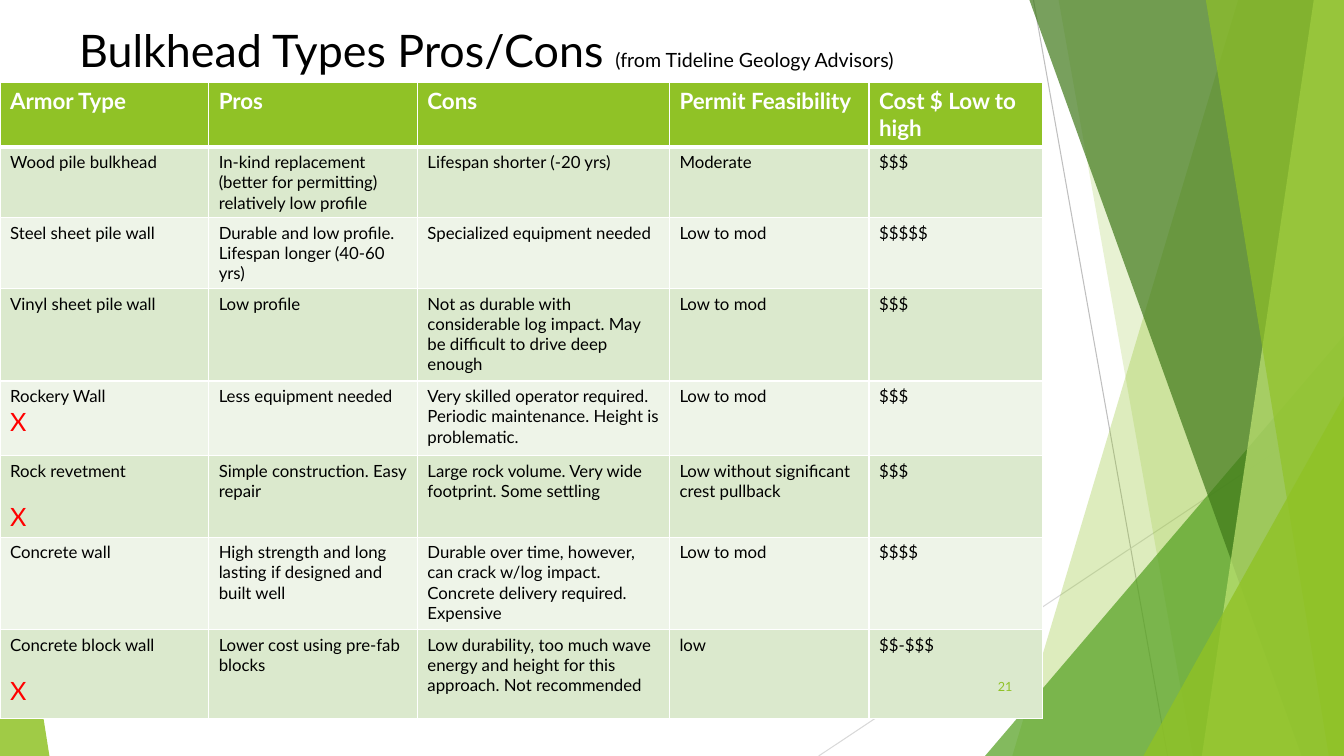
from dataclasses import dataclass

from lxml import etree
from pptx import Presentation
from pptx import util as u
from pptx.dml.color import RGBColor
from pptx.enum import shapes, text
from pptx.oxml import ns


@dataclass(frozen=True)
class Theme:
    font: str = "Lato"
    black: str = "000000"
    white: str = "FFFFFF"
    red: str = "FF0000"
    lime: str = "90C226"
    green: str = "54A021"
    forest: str = "3F7819"
    pale: str = "C0E474"
    bands: tuple = ("DBE9CD", "EEF4E8")
    grays: tuple = ("BFBFBF", "D9D9D9")
    title: int = 32
    mark: int = 18
    head: int = 16
    note: int = 14
    body: int = 12
    page: int = 9


def sub(parent, tag, **attrs):
    return etree.SubElement(parent, ns.qn(tag), **attrs)


class Deck:
    def __init__(self, theme):
        self.theme = theme
        self.prs = Presentation()
        self.prs.slide_width = u.Inches(13.33)
        self.prs.slide_height = u.Inches(7.5)
        self.slide = self.prs.slides.add_slide(self.prs.slide_layouts[6])
        self.shapes = self.slide.shapes

    def style(self, font, size, color, bold=False):
        font.name = self.theme.font
        font.size = u.Pt(size)
        font.bold = bold
        font.color.rgb = RGBColor.from_string(color)

    def paint(self, shape, color, alpha):
        """Fill a borderless shape; alpha is its opacity in percent."""
        shape.shadow.inherit = False
        shape.line.fill.background()
        shape.fill.solid()
        shape.fill.fore_color.rgb = RGBColor.from_string(color)
        tone = shape.fill._xPr.find(ns.qn("a:solidFill"))[0]
        sub(tone, "a:alpha", val=str(alpha * 1000))

    def line(self, start, end, color):
        ends = [u.Inches(v) for v in (*start, *end)]
        line = self.shapes.add_connector(shapes.MSO_CONNECTOR.STRAIGHT, *ends)
        line.line.color.rgb = RGBColor.from_string(color)
        line.line.width = u.Pt(0.75)
        sub(line._element.spPr, "a:effectLst")

    def facet(self, top, foot, color, alpha):
        """Draw a band from a slanted left side to the right slide edge."""
        points = [(top, 0), (13.33, 0), (13.33, 7.5), (foot, 7.5)]
        points = [(u.Inches(x), u.Inches(y)) for x, y in points]
        path = self.shapes.build_freeform(*points[0])
        path.add_line_segments(points[1:], close=True)
        self.paint(path.convert_to_shape(), color, alpha)

    def wedge(self, box, apex, color, alpha):
        shape = self.shapes.add_shape(
            shapes.MSO_SHAPE.ISOSCELES_TRIANGLE, *map(u.Inches, box))
        shape.adjustments[0] = apex
        self.paint(shape, color, alpha)

    def label(self, box, runs, align, anchor=text.MSO_ANCHOR.TOP):
        """Add one line of text made of (words, size, color) runs."""
        frame = self.shapes.add_textbox(*map(u.Inches, box)).text_frame
        frame.word_wrap = True
        frame.vertical_anchor = anchor
        para = frame.paragraphs[0]
        para.alignment = align
        for words, size, color in runs:
            run = para.add_run()
            run.text = words
            self.style(run.font, size, color)

    def border(self, cell, row):
        """Draw white cell edges, thick between the header and the body."""
        props = cell._tc.get_or_add_tcPr()
        thick = {0: "a:lnB", 1: "a:lnT"}.get(row)
        for i, side in enumerate(("a:lnL", "a:lnR", "a:lnT", "a:lnB")):
            width = u.Pt(3 if side == thick else 1)
            edge = sub(props, side, w=str(width))
            sub(sub(edge, "a:solidFill"), "a:srgbClr", val=self.theme.white)
            props.insert(i, edge)

    def table(self, box, widths, heights, rows, gaps):
        """Add the table; gaps maps a row to the space above its red mark."""
        t = self.theme
        grid = self.shapes.add_table(
            len(rows), len(widths), *map(u.Inches, box)).table
        for col, width in zip(grid.columns, widths):
            col.width = u.Inches(width)
        for r, (words, height) in enumerate(zip(rows, heights)):
            grid.rows[r].height = u.Inches(height)
            fill = t.bands[(r - 1) % 2] if r else t.lime
            for c, value in enumerate(words):
                cell = grid.cell(r, c)
                cell.fill.solid()
                cell.fill.fore_color.rgb = RGBColor.from_string(fill)
                self.border(cell, r)
                cell.text = value
                for para in cell.text_frame.paragraphs:
                    if r:
                        self.style(para.font, t.body, t.black)
                    else:
                        self.style(para.font, t.head, t.white, True)
            if r in gaps:
                mark = grid.cell(r, 0).text_frame.add_paragraph()
                mark.text = "X"
                mark.space_before = u.Pt(gaps[r])
                self.style(mark.font, t.mark, t.red)


ROWS = [
    ("Armor Type", "Pros", "Cons", "Permit Feasibility", "Cost $ Low to high"),
    ("Wood pile bulkhead",
     "In-kind replacement\n(better for permitting) relatively low profile",
     "Lifespan shorter (-20 yrs)", "Moderate", "$$$"),
    ("Steel sheet pile wall",
     "Durable and low profile. Lifespan longer (40-60 yrs)",
     "Specialized equipment needed", "Low to mod", "$$$$$"),
    ("Vinyl sheet pile wall", "Low profile",
     "Not as durable with considerable log impact. "
     "May be difficult to drive deep enough", "Low to mod", "$$$"),
    ("Rockery Wall", "Less equipment needed",
     "Very skilled operator required. Periodic maintenance. "
     "Height is problematic.", "Low to mod", "$$$"),
    ("Rock revetment", "Simple construction. Easy repair",
     "Large rock volume. Very wide footprint. Some settling",
     "Low without significant crest pullback", "$$$"),
    ("Concrete wall",
     "High strength and long lasting if designed and built well",
     "Durable over time, however, can crack w/log impact. "
     "Concrete delivery required. Expensive", "Low to mod", "$$$$"),
    ("Concrete block wall", "Lower cost using pre-fab blocks",
     "Low durability, too much wave energy and height for this approach. "
     "Not recommended", "low", "$$-$$$"),
]


def main():
    t = Theme()
    deck = Deck(t)
    deck.line((10.25, 0), (11.58, 7.5), t.grays[0])
    deck.line((13.33, 4.03), (8.12, 7.5), t.grays[1])
    deck.facet(12.28, 10.04, t.lime, 30)
    deck.facet(10.5, 11.83, t.lime, 20)
    deck.wedge((9.77, 3.33, 3.56, 4.17), 1, t.green, 72)
    deck.facet(10.21, 12.91, t.forest, 70)
    deck.facet(13.03, 11.92, t.pale, 70)
    deck.facet(11.96, 13.18, t.lime, 65)
    deck.wedge((11.34, 3.93, 1.99, 3.57), 1, t.lime, 80)
    deck.wedge((0, 4.39, 0.49, 3.11), 0, t.lime, 85)
    deck.table((0, 0.82, 10.34, 6.3), (2.07, 2.07, 2.5, 1.98, 1.72),
               (0.64, 0.69, 0.7, 0.92, 0.74, 0.8, 0.92, 0.88),
               ROWS, {4: 0, 5: 15, 7: 15})
    deck.label((0.23, 0.18, 9.19, 0.64),
               [("Bulkhead Types Pros/Cons ", t.title, t.black),
                ("(from Tideline Geology Advisors)", t.note, t.black)],
               text.PP_ALIGN.CENTER)
    deck.label((9.39, 6.61, 0.75, 0.4), [("21", t.page, t.lime)],
               text.PP_ALIGN.RIGHT, text.MSO_ANCHOR.MIDDLE)
    deck.prs.save("out.pptx")


if __name__ == "__main__":
    main()
